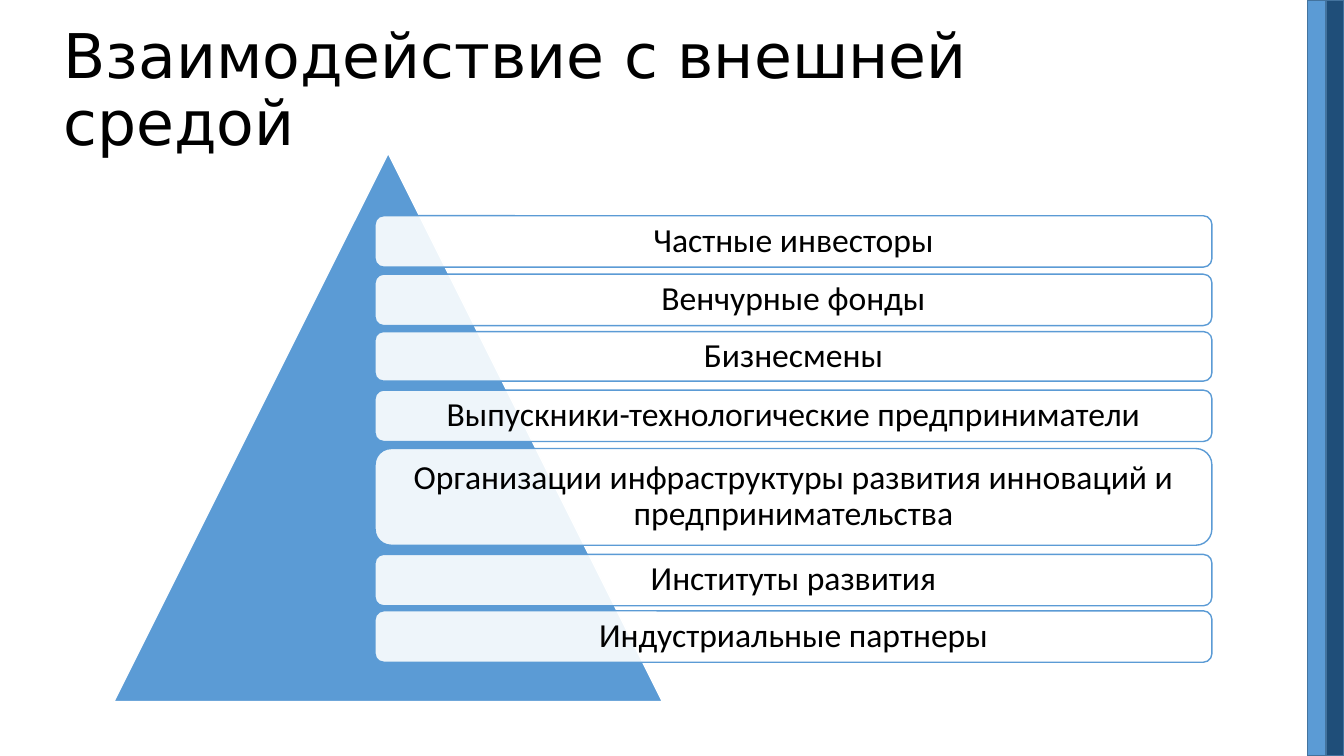
from typing import NamedTuple

from lxml import etree
from pptx import Presentation
from pptx.dml.color import RGBColor
from pptx.enum.shapes import MSO_SHAPE
from pptx.enum.text import MSO_ANCHOR, MSO_AUTO_SIZE, PP_ALIGN
from pptx.oxml.ns import qn
from pptx.util import Inches, Pt

RECTANGLE = MSO_SHAPE.RECTANGLE
TRIANGLE = MSO_SHAPE.ISOSCELES_TRIANGLE
ROUNDED = MSO_SHAPE.ROUNDED_RECTANGLE
MIDDLE = MSO_ANCHOR.MIDDLE
LEFT, CENTER = PP_ALIGN.LEFT, PP_ALIGN.CENTER
NO_AUTOFIT = MSO_AUTO_SIZE.NONE

BLACK = RGBColor(0x00, 0x00, 0x00)
WHITE = RGBColor(0xFF, 0xFF, 0xFF)
BLUE = RGBColor(0x5B, 0x9B, 0xD5)
NAVY = RGBColor(0x1F, 0x4E, 0x79)
STRIPE_EDGE = RGBColor(0x43, 0x73, 0x9E)

PAGE_WIDTH, PAGE_HEIGHT = 13.33, 7.5
STRIPE_WIDTH = 0.18
PARTNER_LEFT, PARTNER_WIDTH = 3.72, 8.3
PARTNER_OPACITY = 90


class Box(NamedTuple):
    left: float
    top: float
    width: float
    height: float


class Partner(NamedTuple):
    name: str
    top: float
    height: float = 0.51


PARTNERS = [
    Partner("Частные инвесторы", 2.14),
    Partner("Венчурные фонды", 2.72),
    Partner("Бизнесмены", 3.29, 0.49),
    Partner("Выпускники-технологические предприниматели", 3.87),
    Partner("Организации инфраструктуры развития инноваций и предпринимательства", 4.45, 0.96),
    Partner("Институты развития", 5.5),
    Partner("Индустриальные партнеры", 6.06),
]


def add_figure(page, kind: MSO_SHAPE, box: Box, fill: RGBColor, line: RGBColor):
    shape = page.shapes.add_shape(kind, *map(Inches, box))
    shape.shadow.inherit = False
    shape.fill.solid()
    shape.fill.fore_color.rgb = fill
    shape.line.color.rgb = line
    shape.line.width = Pt(1)
    return shape


def set_opacity(shape, percent: int) -> None:
    color = shape.fill._xPr.find(qn("a:solidFill"))[0]
    etree.SubElement(color, qn("a:alpha")).set("val", str(percent * 1000))


def write_text(shape, text: str, font: str, size: int, align: PP_ALIGN) -> None:
    frame = shape.text_frame
    frame.word_wrap = True
    frame.auto_size = NO_AUTOFIT
    frame.vertical_anchor = MIDDLE
    para = frame.paragraphs[0]
    para.alignment = align
    para.line_spacing = 0.9
    span = para.add_run()
    span.text = text
    span.font.name = font
    span.font.size = Pt(size)
    span.font.color.rgb = BLACK


def add_title(page, text: str, box: Box) -> None:
    title = page.shapes.title
    title.left, title.top, title.width, title.height = map(Inches, box)
    write_text(title, text, "DejaVu Sans", 44, LEFT)


def add_stripes(page) -> None:
    """Draw the two vertical bands that end at the right edge."""
    for steps, fill in ((2, BLUE), (1, NAVY)):
        left = PAGE_WIDTH - steps * STRIPE_WIDTH
        add_figure(page, RECTANGLE, Box(left, 0, STRIPE_WIDTH, PAGE_HEIGHT), fill, STRIPE_EDGE)


def add_partner(page, partner: Partner) -> None:
    box = Box(PARTNER_LEFT, partner.top, PARTNER_WIDTH, partner.height)
    shape = add_figure(page, ROUNDED, box, WHITE, BLUE)
    set_opacity(shape, PARTNER_OPACITY)
    write_text(shape, partner.name, "Calibri", 24, CENTER)
    frame = shape.text_frame
    frame.margin_left = frame.margin_right = Inches(0.1)
    frame.margin_top = frame.margin_bottom = Inches(0.1)


def main() -> None:
    deck = Presentation()
    deck.slide_width, deck.slide_height = Inches(PAGE_WIDTH), Inches(PAGE_HEIGHT)
    page = deck.slides.add_slide(deck.slide_layouts.get_by_name("Title Only"))
    add_title(page, "Взаимодействие с внешней средой", Box(0.53, 0.19, 11.5, 1.45))
    add_stripes(page)
    add_figure(page, TRIANGLE, Box(1.13, 1.52, 5.44, 5.44), BLUE, WHITE)
    for partner in PARTNERS:
        add_partner(page, partner)
    deck.save("out.pptx")


if __name__ == "__main__":
    main()
